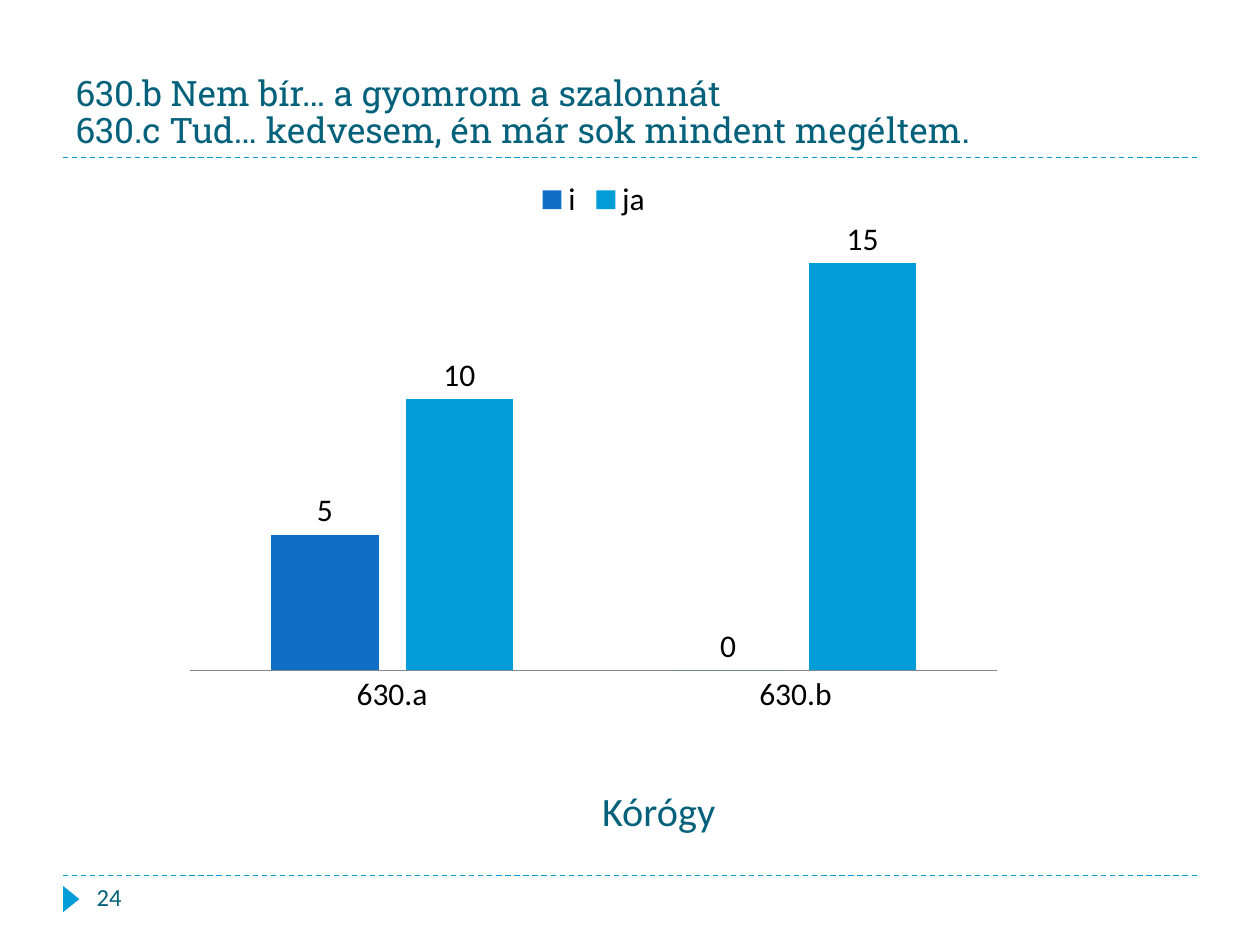
from lxml import etree
from pptx import Presentation
from pptx.chart.data import CategoryChartData
from pptx.dml.color import RGBColor
from pptx.enum.chart import XL_CHART_TYPE as ChartType
from pptx.enum.chart import XL_LABEL_POSITION as LabelPos
from pptx.enum.chart import XL_LEGEND_POSITION as LegendPos
from pptx.enum.chart import XL_TICK_LABEL_POSITION as TickLabelPos
from pptx.enum.chart import XL_TICK_MARK as TickMark
from pptx.enum.dml import MSO_LINE_DASH_STYLE as Dash
from pptx.enum.shapes import MSO_CONNECTOR as Connector
from pptx.enum.shapes import MSO_SHAPE as Shape
from pptx.enum.text import MSO_ANCHOR as Anchor
from pptx.enum.text import PP_ALIGN as Align
from pptx.oxml.ns import qn
from pptx.util import Cm, Pt

TEAL = RGBColor(0x04, 0x61, 0x7B)
BLUE = RGBColor(0x0F, 0x6F, 0xC6)
CYAN = RGBColor(0x00, 0x9D, 0xD9)
BLACK = RGBColor(0, 0, 0)
GRAY = RGBColor(0x80, 0x88, 0x90)

HEAD_FONT = "Roboto Slab"
BODY_FONT = "Calibri"


def style_font(font, name, size, color):
    font.name = name
    font.size = Pt(size)
    font.color.rgb = color
    font.bold = False


def add_run(p, text, name, size, color=TEAL):
    r = p.add_run()
    r.text = text
    style_font(r.font, name, size, color)


def set_title(s, lines):
    title = s.shapes.title
    title.left, title.top, title.width, title.height = Cm(1.27), Cm(0.64), Cm(22.86), Cm(2.54)
    tf = title.text_frame
    tf.word_wrap = True
    tf.vertical_anchor = Anchor.BOTTOM
    p = tf.paragraphs[0]
    p.alignment = Align.LEFT
    p.line_spacing = 0.9
    for i, line in enumerate(lines):
        if i:
            p.add_line_break()
        add_run(p, line, HEAD_FONT, 20)


def add_rule(s, y):
    line = s.shapes.add_connector(Connector.STRAIGHT, Cm(1.27), Cm(y), Cm(24.13), Cm(y))
    line.line.color.rgb = CYAN
    line.line.width = Pt(0.75)
    line.line.dash_style = Dash.DASH
    etree.SubElement(line._element.spPr, qn("a:effectLst"))


def add_marker(s):
    sp = s.shapes.add_shape(Shape.ISOSCELES_TRIANGLE, Cm(1.17), Cm(17.96), Cm(0.53), Cm(0.33))
    sp.rotation = 90
    sp.shadow.inherit = False
    sp.fill.solid()
    sp.fill.fore_color.rgb = CYAN
    sp.line.fill.background()


def add_text(s, text, left, top, width, height, size):
    tf = s.shapes.add_textbox(Cm(left), Cm(top), Cm(width), Cm(height)).text_frame
    tf.word_wrap = True
    p = tf.paragraphs[0]
    add_run(p, text, BODY_FONT, size)
    return p


def add_column_chart(s, categories, series):
    data = CategoryChartData()
    data.categories = categories
    for name, values, _ in series:
        data.add_series(name, values)
    chart = s.shapes.add_chart(ChartType.COLUMN_CLUSTERED, Cm(3.5), Cm(3.33),
                               Cm(16.94), Cm(11.28), data).chart
    style_font(chart.font, BODY_FONT, 18, BLACK)
    chart.has_title = False
    chart.has_legend = True
    chart.legend.position = LegendPos.TOP
    chart.legend.include_in_layout = False

    # Axes
    axis = chart.category_axis
    axis.major_tick_mark = TickMark.NONE
    axis.tick_label_position = TickLabelPos.NEXT_TO_AXIS
    axis.format.line.color.rgb = GRAY
    axis.format.line.width = Pt(0.75)
    values_axis = chart.value_axis
    values_axis.visible = False
    values_axis.has_major_gridlines = False
    values_axis.minimum_scale = 0
    values_axis.maximum_scale = 16

    # Columns
    plot = chart.plots[0]
    plot.gap_width = 150
    plot.overlap = -25
    plot.vary_by_categories = False
    for columns, (_, _, color) in zip(plot.series, series):
        columns.format.fill.solid()
        columns.format.fill.fore_color.rgb = color
        labels = columns.data_labels
        labels.show_value = True
        labels.position = LabelPos.OUTSIDE_END


def main():
    prs = Presentation()
    prs.slide_width, prs.slide_height = Cm(25.4), Cm(19.05)
    s = prs.slides.add_slide(prs.slide_layouts[5])

    # Frame
    for y in (17.65, 3.18):
        add_rule(s, y)
    add_marker(s)

    # Title, page number and place name
    set_title(s, ["630.b Nem bír… a gyomrom a szalonnát",
                  "630.c Tud… kedvesem, én már sok mindent megéltem."])
    add_text(s, "24", 1.7, 17.65, 5.51, 1.02, 14)
    place = add_text(s, "Kórógy", 1.7, 15.72, 22.4, 1.78, 23)
    place.alignment = Align.CENTER
    place.space_before = Pt(5)
    place._p.get_or_add_pPr().set("marL", str(Cm(0.76)))

    # Counts of each form
    add_column_chart(s, ["630.a", "630.b"],
                     [("i", (5, 0), BLUE), ("ja", (10, 15), CYAN)])
    prs.save("out.pptx")


if __name__ == "__main__":
    main()
